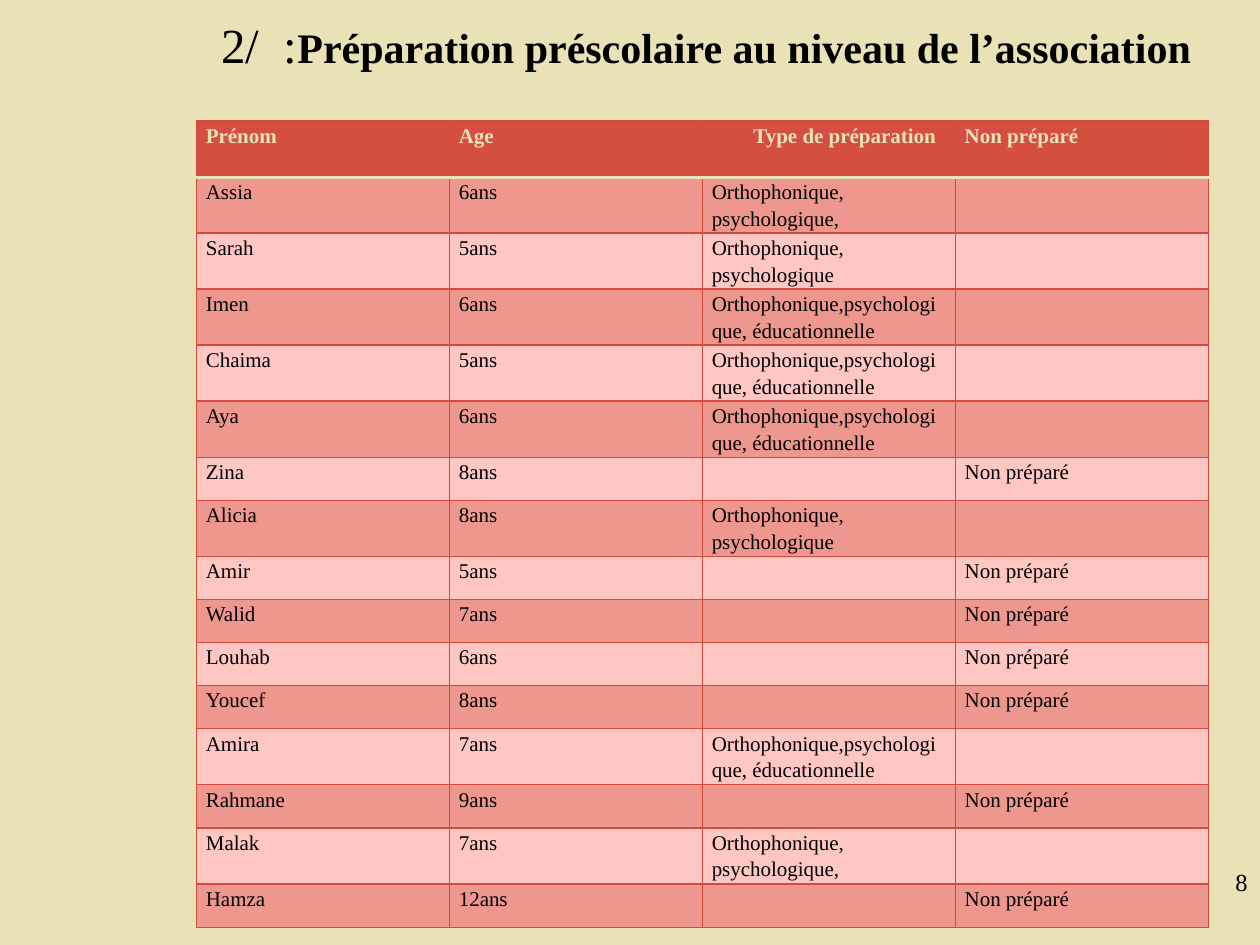
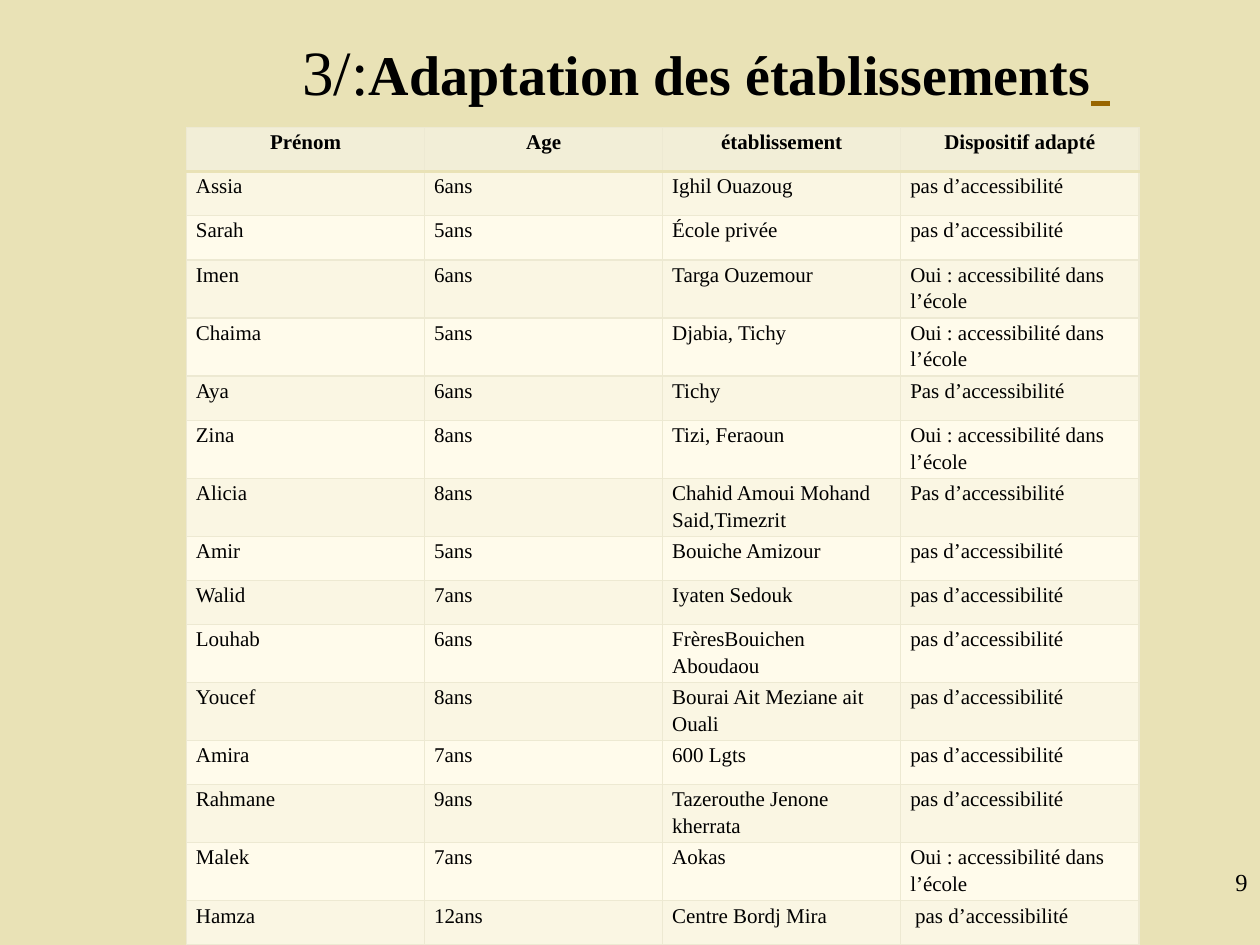
from lxml import etree
from pptx import Presentation
from pptx.dml.color import RGBColor
from pptx.enum.text import MSO_ANCHOR, MSO_AUTO_SIZE, PP_ALIGN
from pptx.oxml.ns import qn
from pptx.util import Cm, Pt

LEFT, CENTER, RIGHT = PP_ALIGN.LEFT, PP_ALIGN.CENTER, PP_ALIGN.RIGHT
MIDDLE = MSO_ANCHOR.MIDDLE
NO_AUTOFIT = MSO_AUTO_SIZE.NONE

FONT = "Times New Roman"
SAND = RGBColor(0xE9, 0xE2, 0xB6)
BLACK = RGBColor(0x00, 0x00, 0x00)
BROWN = RGBColor(0x99, 0x66, 0x00)
RED = RGBColor(0xD5, 0x4F, 0x41)
RED_LINE = RGBColor(0xD4, 0x4A, 0x3C)
ROSE = RGBColor(0xEE, 0x97, 0x8F)
PINK = RGBColor(0xFF, 0xC7, 0xC4)
CREAM = RGBColor(0xF2, 0xEE, 0xD7)
CREAM_LINE = RGBColor(0xED, 0xE9, 0xD2)
IVORY = RGBColor(0xFA, 0xF6, 0xE3)
PALE_IVORY = RGBColor(0xFF, 0xFB, 0xEB)

WRAP_LENGTH = 20  # longer cell texts take two lines
CELL_MARGIN = Cm(0.19)

ORTHO_PSY = "Orthophonique, psychologique"
ORTHO_PSY_EDU = "Orthophonique,psychologique, éducationnelle"
UNPREPARED = "Non préparé"
ACCESS = "Oui : accessibilité dans l’école"
NO_ACCESS = "pas d’accessibilité"

PREPARATION_ROWS = [
    ("Prénom", "Age", "Type de préparation", UNPREPARED),
    ("Assia", "6ans", ORTHO_PSY + ",", ""),
    ("Sarah", "5ans", ORTHO_PSY, ""),
    ("Imen", "6ans", ORTHO_PSY_EDU, ""),
    ("Chaima", "5ans", ORTHO_PSY_EDU, ""),
    ("Aya", "6ans", ORTHO_PSY_EDU, ""),
    ("Zina", "8ans", "", UNPREPARED),
    ("Alicia", "8ans", ORTHO_PSY, ""),
    ("Amir", "5ans", "", UNPREPARED),
    ("Walid", "7ans", "", UNPREPARED),
    ("Louhab", "6ans", "", UNPREPARED),
    ("Youcef", "8ans", "", UNPREPARED),
    ("Amira", "7ans", ORTHO_PSY_EDU, ""),
    ("Rahmane", "9ans", "", UNPREPARED),
    ("Malak", "7ans", ORTHO_PSY + ",", ""),
    ("Hamza", "12ans", "", UNPREPARED),
]

SCHOOL_ROWS = [
    ("Prénom", "Age", "établissement", "Dispositif adapté"),
    ("Assia", "6ans", "Ighil Ouazoug", NO_ACCESS),
    ("Sarah", "5ans", "École privée", NO_ACCESS),
    ("Imen", "6ans", "Targa Ouzemour", ACCESS),
    ("Chaima", "5ans", "Djabia, Tichy", ACCESS),
    ("Aya", "6ans", "Tichy", "Pas d’accessibilité"),
    ("Zina", "8ans", "Tizi, Feraoun", ACCESS),
    ("Alicia", "8ans", "Chahid Amoui Mohand Said,Timezrit", "Pas d’accessibilité"),
    ("Amir", "5ans", "Bouiche Amizour", NO_ACCESS),
    ("Walid", "7ans", "Iyaten Sedouk", NO_ACCESS),
    ("Louhab", "6ans", "FrèresBouichen Aboudaou", NO_ACCESS),
    ("Youcef", "8ans", "Bourai Ait Meziane ait Ouali", NO_ACCESS),
    ("Amira", "7ans", "600 Lgts", NO_ACCESS),
    ("Rahmane", "9ans", "Tazerouthe Jenone kherrata", NO_ACCESS),
    ("Malek", "7ans", "Aokas", ACCESS),
    ("Hamza", "12ans", "Centre Bordj Mira", NO_ACCESS),
]

# Title runs: text, size, then any special formatting.
# Indents: (row, column) -> extra left margin.
SLIDES = [
    dict(
        number="8",
        title=[
            ("2/", 28, {}),
            (" ", 28, {"spacing": 7}),
            (":", 28, {}),
            ("Préparation préscolaire au niveau de l’association", 24, {"bold": True}),
        ],
        title_height=Cm(1.78),
        rows=PREPARATION_ROWS,
        left=Cm(3.96), top=Cm(2.44), column_width=Cm(5.1),
        short_row=Cm(0.87), tall_row=Cm(1.13), header_row=Cm(1.13),
        indents={(0, 2): Cm(0.84)},
        header_align=LEFT, header_color=SAND,
        header_fill=RED, bands=(PINK, ROSE), line=RED_LINE,
    ),
    dict(
        number="9",
        title=[
            ("3/:", 36, {}),
            ("Adaptation des établissements", 32, {"bold": True}),
            (" ", 44, {"color": BROWN, "italic": True, "underline": True}),
        ],
        title_height=Cm(2.59),
        rows=SCHOOL_ROWS,
        left=Cm(3.76), top=Cm(2.57), column_width=Cm(4.8),
        short_row=Cm(0.89), tall_row=Cm(1.17), header_row=Cm(0.89),
        indents={(15, 3): Cm(0.1)},
        header_align=CENTER, header_color=BLACK,
        header_fill=CREAM, bands=(PALE_IVORY, IVORY), line=CREAM_LINE,
    ),
]


def add_run(paragraph, text, size, color=BLACK, bold=False, italic=False,
            underline=False, spacing=0):
    run = paragraph.add_run()
    run.text = text
    font = run.font
    font.name, font.size = FONT, Pt(size)
    font.bold, font.italic, font.underline = bold, italic, underline
    font.color.rgb = color
    if spacing:
        run._r.get_or_add_rPr().set("spc", str(spacing * 100))


def set_border(cell, side, color, width):
    """Draw one cell border; side is L, R, T or B."""
    line = etree.SubElement(cell._tc.get_or_add_tcPr(), qn(f"a:ln{side}"),
                            w=str(Pt(width)))
    fill = etree.SubElement(line, qn("a:solidFill"))
    etree.SubElement(fill, qn("a:srgbClr"), val=str(color))


def add_title(slide, content):
    title = slide.shapes.title
    title.left, title.top = Cm(3.76), Cm(0)
    title.width, title.height = Cm(20.96), content["title_height"]
    frame = title.text_frame
    frame.auto_size = NO_AUTOFIT
    frame.word_wrap = True
    frame.vertical_anchor = MIDDLE
    paragraph = frame.paragraphs[0]
    paragraph.alignment = CENTER
    for text, size, formatting in content["title"]:
        add_run(paragraph, text, size, **formatting)


def format_cell(cell, text, row, indent, content):
    is_header = row == 0
    # The rule under the header is shared by the first two rows.
    rules = {"L": None, "R": None, "T": row == 1, "B": is_header}
    for side, is_header_rule in rules.items():
        if is_header_rule:
            set_border(cell, side, SAND, 2)
        else:
            set_border(cell, side, content["line"], 0.75)
    cell.fill.solid()
    cell.fill.fore_color.rgb = (
        content["header_fill"] if is_header else content["bands"][row % 2])
    cell.margin_left, cell.margin_right = CELL_MARGIN + indent, CELL_MARGIN
    cell.margin_top = cell.margin_bottom = 0
    if text:
        paragraph = cell.text_frame.paragraphs[0]
        paragraph.alignment = content["header_align"] if is_header else LEFT
        paragraph.line_spacing = 1.15
        color = content["header_color"] if is_header else BLACK
        add_run(paragraph, text, 12, color, bold=is_header)


def add_children_table(slide, content):
    rows = content["rows"]
    heights = [content["header_row"]] + [
        content["tall_row"] if max(map(len, row)) > WRAP_LENGTH
        else content["short_row"] for row in rows[1:]]
    columns = len(rows[0])
    table = slide.shapes.add_table(
        len(rows), columns, content["left"], content["top"],
        content["column_width"] * columns, sum(heights)).table
    table.horz_banding = False
    for r, (texts, height) in enumerate(zip(rows, heights)):
        table.rows[r].height = height
        for c, text in enumerate(texts):
            indent = content["indents"].get((r, c), 0)
            format_cell(table.cell(r, c), text, r, indent, content)


def add_page_number(slide, number):
    box = slide.shapes.add_textbox(Cm(20.12), Cm(17.35), Cm(5.28), Cm(1.27))
    box.text_frame.word_wrap = True
    paragraph = box.text_frame.paragraphs[0]
    paragraph.alignment = RIGHT
    add_run(paragraph, number, 14)


def main():
    prs = Presentation()
    prs.slide_width, prs.slide_height = Cm(25.4), Cm(19.05)
    background = prs.slide_master.background.fill
    background.solid()
    background.fore_color.rgb = SAND
    title_only = prs.slide_layouts[5]
    for content in SLIDES:
        slide = prs.slides.add_slide(title_only)
        add_title(slide, content)
        add_children_table(slide, content)
        add_page_number(slide, content["number"])
    prs.save("out.pptx")


if __name__ == "__main__":
    main()
